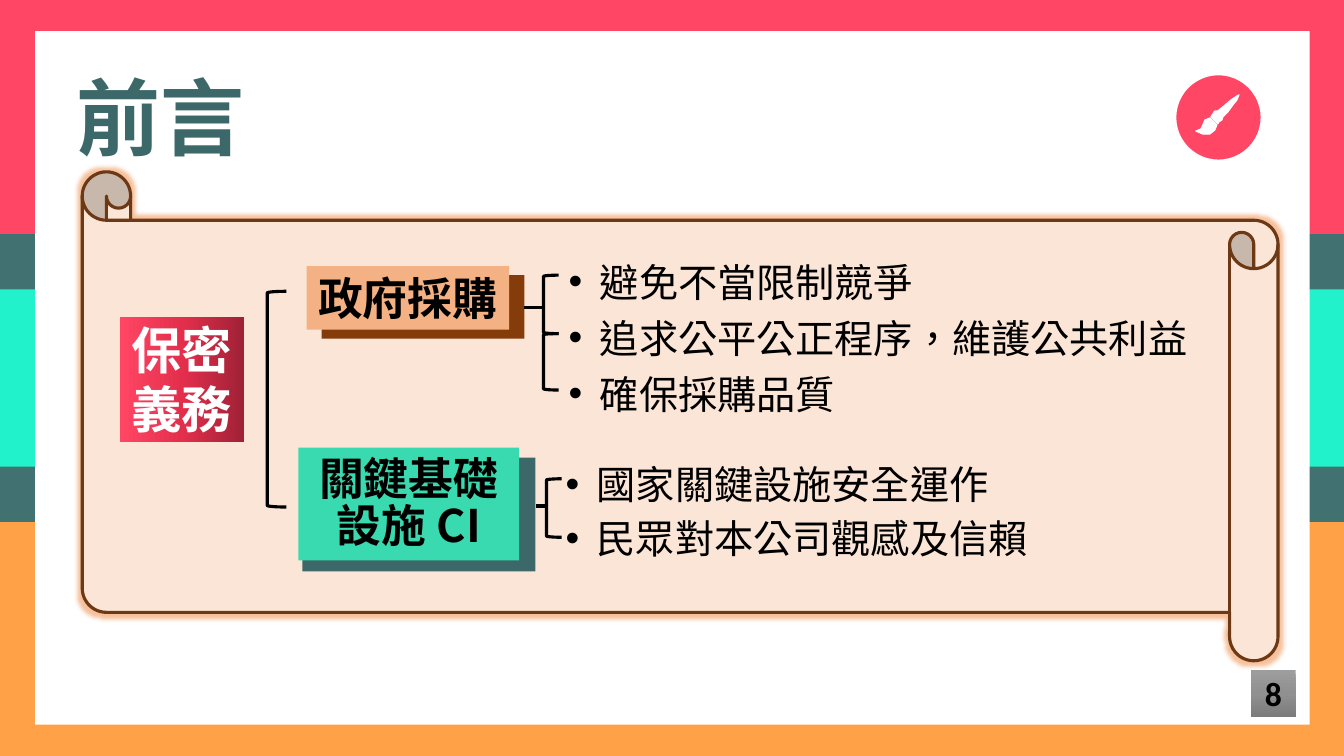
"""Build the foreword slide on confidentiality duties."""
from dataclasses import dataclass
from typing import Any

from lxml import etree
from pptx import Presentation
from pptx.dml.color import RGBColor
from pptx.enum.dml import MSO_FILL
from pptx.enum.lang import MSO_LANGUAGE_ID
from pptx.enum.shapes import MSO_CONNECTOR, MSO_SHAPE
from pptx.enum.text import MSO_ANCHOR, MSO_AUTO_SIZE, PP_ALIGN
from pptx.oxml import parse_xml
from pptx.oxml.ns import nsdecls, qn
from pptx.util import Emu, Pt

RECT, OVAL = MSO_SHAPE.RECTANGLE, MSO_SHAPE.OVAL
SCROLL, BRACKET = MSO_SHAPE.VERTICAL_SCROLL, MSO_SHAPE.LEFT_BRACKET
STRAIGHT, SOLID = MSO_CONNECTOR.STRAIGHT, MSO_FILL.SOLID
TOP, MIDDLE = MSO_ANCHOR.TOP, MSO_ANCHOR.MIDDLE
LEFT, CENTER = PP_ALIGN.LEFT, PP_ALIGN.CENTER
NO_FIT = MSO_AUTO_SIZE.NONE
CHINESE = MSO_LANGUAGE_ID.TRADITIONAL_CHINESE
PX = 9144


@dataclass(frozen=True)
class Theme:
    cjk: str = "Noto Sans CJK SC"
    latin: str = "Calibri"
    white: str = "FFFFFF"
    black: str = "000000"
    teal: str = "427172"
    deep_teal: str = "3D6869"
    aqua: str = "22F2CC"
    green: str = "3ADAB0"
    coral: str = "FF4664"
    amber: str = "FFA146"
    parchment: str = "FBE5D6"
    scroll_edge: str = "6D3814"
    glow: str = "F4B183"
    peach: str = "F4B183"
    brown: str = "843C0B"
    grays: tuple[str, ...] = ("9D9D9D", "909090", "7C7C7C")
    reds: tuple[str, ...] = ("9F2136", "E32F4C", "FF4664")
    title_size: int = 60
    duty_size: int = 36
    branch_size: int = 32
    list_size: int = 28
    number_size: int = 24
    rule: float = 2.25


THEME = Theme()


@dataclass(frozen=True)
class Words:
    lines: tuple[str, ...]
    size: int
    color: str = THEME.black
    font: str = THEME.cjk
    bold: bool = True
    align: PP_ALIGN = CENTER
    anchor: MSO_ANCHOR = MIDDLE
    spacing: int | None = None
    bulleted: bool = False


@dataclass(frozen=True)
class Box:
    at: tuple[int, int, int, int]
    fill: str | tuple[str, ...] | None = None
    kind: MSO_SHAPE = RECT
    edge: str | None = None
    edge_width: float = THEME.rule
    angle: int = 0
    words: Words | None = None


FRAME = (
    Box((0, 0, 1333, 750), THEME.teal),
    Box((0, 287, 1333, 176), THEME.aqua),
    Box((0, 0, 1333, 232), THEME.coral),
    Box((0, 518, 1333, 232), THEME.amber),
    Box((35, 31, 1264, 688), THEME.white),
)
BADGE = Box((1166, 74, 85, 85), THEME.coral, OVAL, THEME.white, 1)
HANDLE = ((1229, 94), (1227, 95), (1221, 99), (1214, 105), (1208, 110),
          (1205, 110), (1204, 111), (1203, 113), (1201, 116), (1208, 123),
          (1209, 121), (1212, 119), (1213, 116), (1218, 111), (1223, 104),
          (1227, 99))
BRISTLES = ((1193, 124), (1191, 128), (1186, 130), (1193, 133), (1200, 133),
            (1205, 129), (1207, 124), (1200, 117), (1195, 119))
PAGE_NUMBER = Box((1241, 665, 44, 46), THEME.grays, angle=90,
                  words=Words(("8",), THEME.number_size, font=THEME.latin))
PARCHMENT = Box((432, -180, 485, 1186), THEME.parchment, SCROLL, THEME.scroll_edge)
BRANCHES = (
    Box((319, 273, 201, 63), THEME.brown),
    Box((304, 264, 201, 63), THEME.peach,
        words=Words(("政府採購",), THEME.branch_size)),
    Box((119, 315, 123, 124), THEME.reds, angle=180,
        words=Words(("保密義務",), THEME.duty_size, THEME.white, spacing=42)),
    Box((300, 454, 231, 113), THEME.deep_teal),
    Box((296, 444, 219, 112), THEME.green,
        words=Words(("關鍵基礎設施 CI",), THEME.branch_size, spacing=34)),
)
BRACKETS = ((265, 289, 19, 214), (539, 273, 15, 58), (539, 331, 15, 56), (542, 475, 15, 58))
STEMS = ((532, 502, 544, 502), (520, 305, 538, 305))
TITLE = Box((66, 60, 194, 111), words=Words(
    ("前言",), THEME.title_size, THEME.deep_teal, align=LEFT, anchor=TOP))
LISTS = (
    Box((554, 242, 686, 174), words=Words(
        ("避免不當限制競爭", "追求公平公正程序，維護公共利益", "確保採購品質"),
        THEME.list_size, bold=False, align=LEFT, anchor=TOP, spacing=40, bulleted=True)),
    Box((551, 446, 501, 113), words=Words(
        ("國家關鍵設施安全運作", "民眾對本公司觀感及信賴"),
        THEME.list_size, bold=False, align=LEFT, anchor=TOP, spacing=38, bulleted=True)),
)


def scaled(lengths: tuple[int, ...]) -> list[Emu]:
    return [Emu(length * PX) for length in lengths]


def assign(target: Any, values: dict[str, Any]) -> None:
    for name, value in values.items():
        setattr(target, name, value)


def write(shape: Any, words: Words) -> None:
    frame = shape.text_frame
    frame.text = "\n".join(words.lines)
    assign(frame, {"word_wrap": True, "auto_size": NO_FIT, "vertical_anchor": words.anchor})
    for paragraph in frame.paragraphs:
        assign(paragraph, {"alignment": words.align, "space_before": Pt(0),
                           "line_spacing": Pt(words.spacing) if words.spacing else 1.0})
        if words.bulleted:
            props = paragraph._p.get_or_add_pPr()
            props.set("marL", str(31 * PX))
            props.set("indent", str(-31 * PX))
            etree.SubElement(props, qn("a:buFont"), typeface="Arial")
            etree.SubElement(props, qn("a:buChar"), char="•")
        for run in paragraph.runs:
            assign(run.font, {"name": words.font, "size": Pt(words.size),
                              "bold": words.bold, "language_id": CHINESE})
            run.font.color.rgb = RGBColor.from_string(words.color)
            latin = run.font._element.find(qn("a:latin"))
            latin.addnext(parse_xml(f'<a:ea {nsdecls("a")} typeface="{words.font}"/>'))


def paint(shape: Any, box: Box) -> None:
    shape.shadow.inherit = False
    if isinstance(box.fill, str):
        shape.fill.solid()
        shape.fill.fore_color.rgb = RGBColor.from_string(box.fill)
    else:
        shape.fill.background()
    if isinstance(box.fill, tuple):
        stops = "".join(f'<a:gs pos="{i * 50000}"><a:srgbClr val="{color}"/></a:gs>'
                        for i, color in enumerate(box.fill))
        blend = parse_xml(f'<a:gradFill {nsdecls("a")}><a:gsLst>{stops}</a:gsLst>'
                          f'<a:lin ang="{box.angle * 60000}" scaled="0"/></a:gradFill>')
        blank = shape.element.spPr.find(qn("a:noFill"))
        blank.getparent().replace(blank, blend)
    if box.edge:
        shape.line.color.rgb = RGBColor.from_string(box.edge)
        shape.line.width = Pt(box.edge_width)
    else:
        shape.line.fill.background()


def draw(shapes: Any, box: Box) -> Any:
    shape = shapes.add_shape(box.kind, *scaled(box.at))
    paint(shape, box)
    if box.words:
        write(shape, box.words)
    return shape


def place(holder: Any, box: Box) -> None:
    assign(holder, dict(zip(("left", "top", "width", "height"), scaled(box.at))))
    write(holder, box.words)
    holder.element.getparent().append(holder.element)


def draw_brush(shapes: Any) -> None:
    badge = shapes.add_group_shape().shapes
    draw(badge, BADGE)
    outline = badge.build_freeform(*HANDLE[0], scale=PX)
    outline.add_line_segments(HANDLE[1:], close=True)
    outline.move_to(*BRISTLES[0])
    outline.add_line_segments(BRISTLES[1:], close=True)
    paint(outline.convert_to_shape(),
          Box((0, 0, 0, 0), THEME.white, edge=THEME.white, edge_width=0.75))


def draw_scroll(shapes: Any) -> None:
    scroll = draw(shapes, PARCHMENT)
    scroll.rotation = 90
    scroll.adjustments[0] = 0.099
    scroll.element.spPr.find(qn("a:effectLst")).append(parse_xml(
        f'<a:glow {nsdecls("a")} rad="{7 * PX}"><a:srgbClr val="{THEME.glow}">'
        '<a:alpha val="80000"/></a:srgbClr></a:glow>'))


def draw_stem(shapes: Any, ends: tuple[int, int, int, int]) -> None:
    stem = shapes.add_connector(STRAIGHT, *scaled(ends))
    stem.line.color.rgb = RGBColor.from_string(THEME.black)
    stem.line.width = Pt(THEME.rule)
    etree.SubElement(stem.element.spPr, qn("a:effectLst"))


def main() -> None:
    deck = Presentation()
    deck.slide_width, deck.slide_height = scaled((1333, 750))
    slide = deck.slides.add_slide(deck.slide_layouts[3])
    shapes = slide.shapes
    title, *lists = list(slide.placeholders)
    for band in FRAME:
        draw(shapes, band)
    place(title, TITLE)
    draw_brush(shapes)
    draw(shapes, PAGE_NUMBER)
    draw_scroll(shapes)
    for branch in BRANCHES:
        draw(shapes, branch)
    for holder, points in zip(lists, LISTS):
        place(holder, points)
    for bracket in BRACKETS:
        draw(shapes, Box(bracket, kind=BRACKET, edge=THEME.black))
    for stem in STEMS:
        draw_stem(shapes, stem)
    deck.save("out.pptx")


if __name__ == "__main__":
    main()
